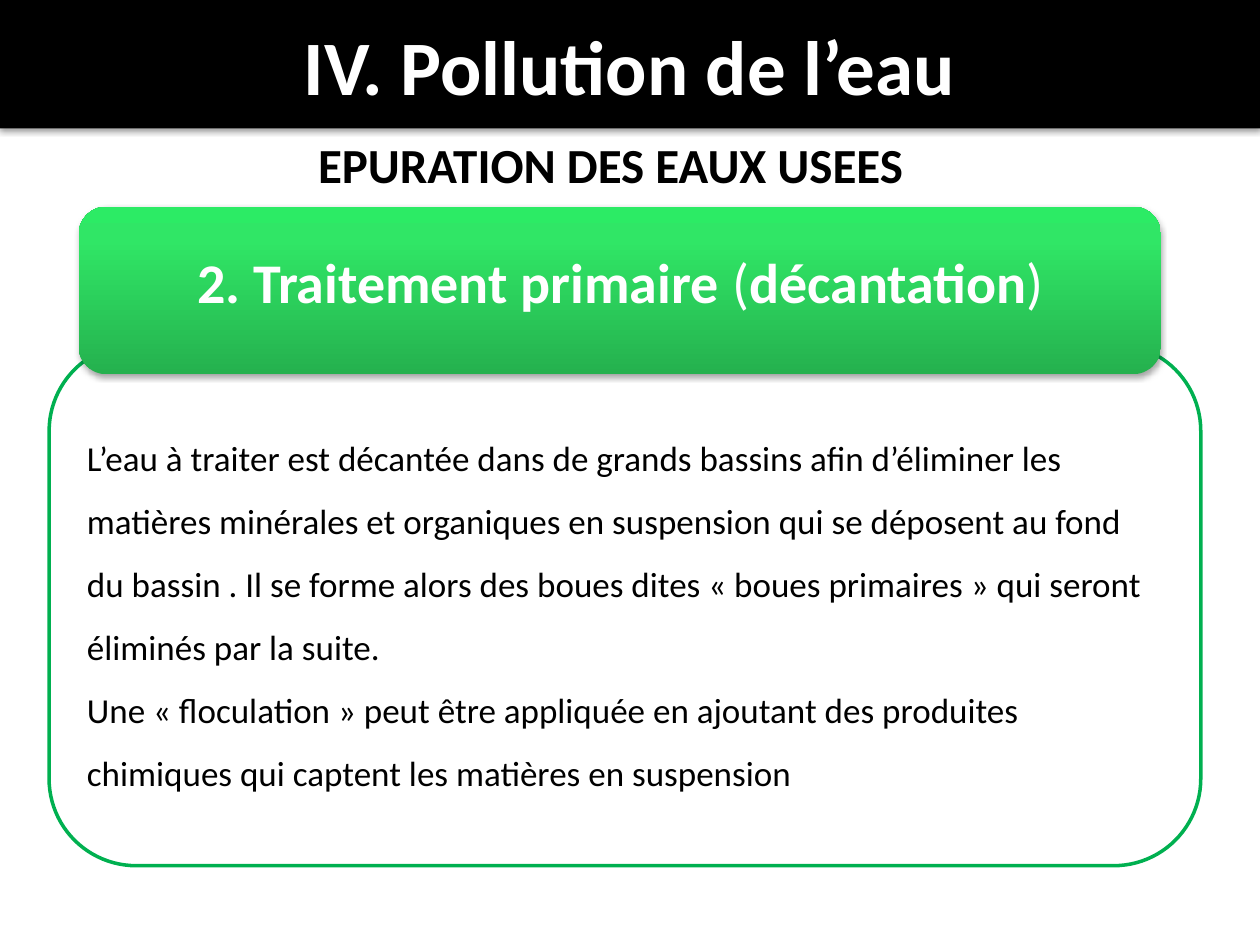
from copy import deepcopy

from lxml import etree
from pptx import Presentation
from pptx import util as u
from pptx.dml.color import RGBColor
from pptx.enum import shapes, text
from pptx.oxml.ns import qn

Pt = u.Pt
C = {"black": "000000", "white": "FFFFFF", "border": "00B050",
     "green_low": "25B14E", "green_mid": "30E666", "green_top": "2CEB65"}
RECT, ROUND = shapes.MSO_SHAPE.RECTANGLE, shapes.MSO_SHAPE.ROUNDED_RECTANGLE
LEFT, CENTER = text.PP_ALIGN.LEFT, text.PP_ALIGN.CENTER


def write(sp, paragraphs, size, color, align=CENTER, spacing=None,
          anchor=text.MSO_ANCHOR.MIDDLE):
    """Fill a shape with paragraphs, each a list of (words, bold) runs."""
    tf = sp.text_frame
    tf.word_wrap = True
    tf.vertical_anchor = anchor
    for i, runs in enumerate(paragraphs):
        p = tf.add_paragraph() if i else tf.paragraphs[0]
        p.alignment = align
        p.line_spacing = spacing
        for words, bold in runs:
            r = p.add_run()
            r.text = words
            r.font.name, r.font.size, r.font.bold = "Calibri", Pt(size), bold
            r.font.color.rgb = RGBColor.from_string(C[color])


def add_shadow(sp):
    """Give a shape a soft shadow straight below it."""
    sp.shadow.inherit = False
    effects = sp._element.spPr.find(qn("a:effectLst"))
    shadow = etree.SubElement(effects, qn("a:outerShdw"), blurRad=str(Pt(3.1)),
                              dist=str(Pt(1.8)), dir="5400000", rotWithShape="0")
    color = etree.SubElement(shadow, qn("a:srgbClr"), val=C["black"])
    etree.SubElement(color, qn("a:alpha"), val="35000")


prs = Presentation()
prs.slide_width, prs.slide_height = Pt(720), Pt(540)
s = prs.slides.add_slide(prs.slide_layouts[6])

# Outlined body panel
sp = s.shapes.add_shape(ROUND, Pt(28.1), Pt(196.6), Pt(658.1), Pt(298.1))
sp.shadow.inherit = False
sp.fill.solid()
sp.fill.fore_color.rgb = RGBColor.from_string(C["white"])
sp.line.color.rgb = RGBColor.from_string(C["border"])
sp.line.width = Pt(2)
write(sp, [
    [("L’eau à traiter est décantée dans de grands bassins afin d’éliminer les "
      "matières minérales et organiques en suspension qui se déposent au fond "
      "du bassin . Il se forme alors des boues dites « boues primaires » qui "
      "seront éliminés par la suite.", False)],
    [("Une « floculation » peut être appliquée en ajoutant des produites "
      "chimiques qui captent les matières en suspension", False)],
], 20, "black", LEFT, 1.5)

# Title band
sp = s.shapes.add_shape(RECT, 0, 0, Pt(720), Pt(73.4))
sp.fill.solid()
sp.fill.fore_color.rgb = RGBColor.from_string(C["black"])
sp.line.fill.background()
add_shadow(sp)
write(sp, [[("IV. Pollution de l’eau", True)]], 44, "white")

# Subtitle
sp = s.shapes.add_textbox(Pt(90), Pt(73.4), Pt(517.7), Pt(41.2))
write(sp, [[("EPURATION DES EAUX USEES", True)]], 28, "black",
      anchor=text.MSO_ANCHOR.TOP)
sp.text_frame.auto_size = text.MSO_AUTO_SIZE.SHAPE_TO_FIT_TEXT

# Green heading: gradient panel and its label, grouped
group = s.shapes.add_group_shape()
sp = group.shapes.add_shape(ROUND, Pt(44.9), Pt(118.1), Pt(618.5), Pt(95.8))
sp.fill.gradient()
sp.fill.gradient_angle = 90
stop_list = sp._element.spPr.find(qn("a:gradFill")).find(qn("a:gsLst"))
stop_list.append(deepcopy(stop_list[-1]))
stops = [(0, "green_low"), (0.8, "green_mid"), (1, "green_top")]
for stop, (position, color) in zip(sp.fill.gradient_stops, stops):
    stop.position = position
    stop.color.rgb = RGBColor.from_string(C[color])
sp.line.fill.background()
add_shadow(sp)

sp = group.shapes.add_textbox(Pt(70.6), Pt(123.1), Pt(568.1), Pt(79.9))
tf = sp.text_frame
tf.margin_left = tf.margin_right = tf.margin_top = tf.margin_bottom = Pt(7.2)
write(sp, [[("2. Traitement primaire ", True), ("(", False),
            ("décantation", True), (")", False)]], 32, "white", spacing=0.9)

prs.save("out.pptx")
